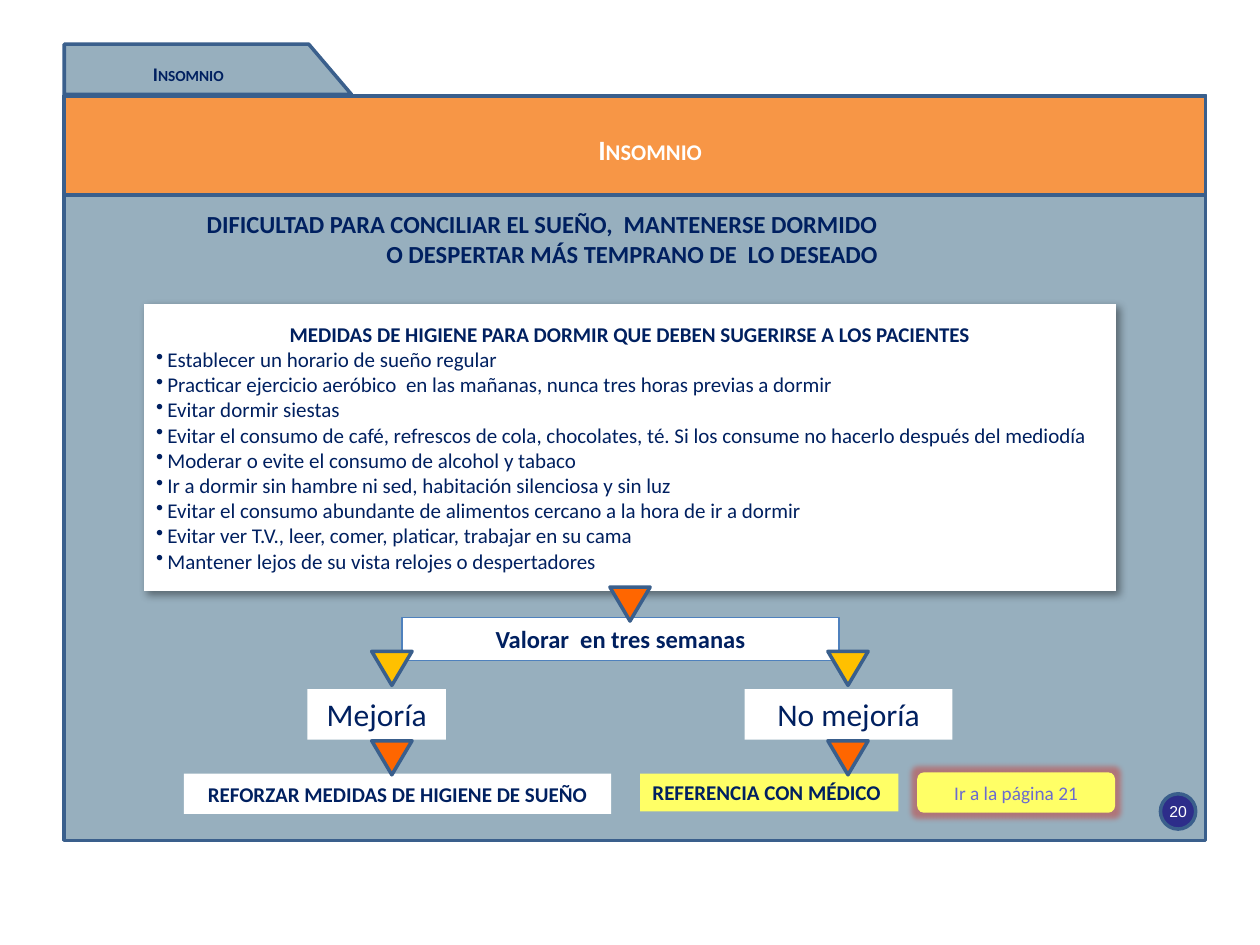
from lxml import etree
from pptx import Presentation
from pptx.dml.color import RGBColor
from pptx.enum.shapes import MSO_SHAPE
from pptx.enum.text import MSO_ANCHOR, PP_ALIGN
from pptx.oxml.ns import qn
from pptx.util import Inches, Pt

RECT, ROUNDED, OVAL = MSO_SHAPE.RECTANGLE, MSO_SHAPE.ROUNDED_RECTANGLE, MSO_SHAPE.OVAL
PROCESS, TRIANGLE = MSO_SHAPE.FLOWCHART_PROCESS, MSO_SHAPE.ISOSCELES_TRIANGLE
LEFT, CENTER, RIGHT = PP_ALIGN.LEFT, PP_ALIGN.CENTER, PP_ALIGN.RIGHT
MIDDLE = MSO_ANCHOR.MIDDLE

STEEL, OUTLINE, NAVY, WHITE = "97AFBE", "3A5F8C", "002060", "FFFFFF"
ORANGE, RED_ORANGE, AMBER, YELLOW = "F79646", "FF6600", "FFC000", "FFFF66"

DEFINITION = ["DIFICULTAD PARA CONCILIAR EL SUEÑO,  MANTENERSE DORMIDO",
              "O DESPERTAR MÁS TEMPRANO DE  LO DESEADO"]
ADVICE_TITLE = "MEDIDAS DE HIGIENE PARA DORMIR QUE DEBEN SUGERIRSE A LOS PACIENTES"
ADVICE = [
    "Establecer un horario de sueño regular",
    "Practicar ejercicio aeróbico  en las mañanas, nunca tres horas previas a dormir",
    "Evitar dormir siestas",
    "Evitar el consumo de café, refrescos de cola, chocolates, té. "
    "Si los consume no hacerlo después del mediodía",
    "Moderar o evite el consumo de alcohol y tabaco",
    "Ir a dormir sin hambre ni sed, habitación silenciosa y sin luz",
    "Evitar el consumo abundante de alimentos cercano a la hora de ir a dormir",
    "Evitar ver T.V., leer, comer, platicar, trabajar en su cama",
    "Mantener lejos de su vista relojes o despertadores",
]


def rgb(hex_color):
    return RGBColor.from_string(hex_color)


def paint(sp, fill=None, line=None, width=2):
    sp.shadow.inherit = False
    if fill:
        sp.fill.solid()
        sp.fill.fore_color.rgb = rgb(fill)
    else:
        sp.fill.background()
    if line:
        sp.line.color.rgb = rgb(line)
        sp.line.width = Pt(width)
    else:
        sp.line.fill.background()
    return sp


def add_box(s, x, y, w, h, fill=None, line=None, width=2, kind=RECT):
    sp = s.shapes.add_shape(kind, Inches(x), Inches(y), Inches(w), Inches(h))
    return paint(sp, fill, line, width)


def write(sp, lines, size, color=NAVY, bold=True, align=CENTER, font="Calibri", small_caps=False):
    tf = sp.text_frame
    tf.word_wrap = True
    tf.vertical_anchor = MIDDLE
    tf.text = "\n".join(lines)
    for p in tf.paragraphs:
        p.alignment = align
        p.font.name, p.font.size, p.font.bold = font, Pt(size), bold
        p.font.color.rgb = rgb(color)
        if small_caps:
            p.font._rPr.set("cap", "small")
    return tf


def add_effect(sp, tag, color, alpha, **attributes):
    """Add a glow or outer shadow; alpha is a percentage."""
    effects = sp._element.spPr.find(qn("a:effectLst"))
    effect = etree.SubElement(effects, qn(tag), {k: str(v) for k, v in attributes.items()})
    clr = etree.SubElement(effect, qn("a:srgbClr"), val=color)
    etree.SubElement(clr, qn("a:alpha"), val=str(alpha * 1000))


def add_bullet(p, indent):
    pPr = p._p.get_or_add_pPr()
    pPr.set("marL", str(Inches(indent)))
    pPr.set("indent", str(-Inches(indent)))
    bullet = etree.Element(qn("a:buChar"), char="•")
    pPr.insert_element_before(bullet, "a:tabLst", "a:defRPr", "a:extLst")


def add_down_arrow(s, center, y, fill):
    w, h = 0.32, 0.27
    sp = add_box(s, center - w / 2, y, w, h, fill, OUTLINE, kind=TRIANGLE)
    sp._element.spPr.xfrm.set("flipV", "1")


def add_tab(s, x, y, w, h):
    slant = 0.34
    corners = [(x + w, y + h), (x + w - slant, y), (x, y)]
    builder = s.shapes.build_freeform(Inches(x), Inches(y + h), scale=1.0)
    builder.add_line_segments([(Inches(a), Inches(b)) for a, b in corners], close=True)
    paint(builder.convert_to_shape(), STEEL, OUTLINE)
    label = add_box(s, x + 0.16, y + 0.09, 1.65, 0.29)
    write(label, ["Insomnio"], 11, small_caps=True)


def add_header(s, x, y, w, h):
    add_box(s, x, y, w, h, ORANGE, OUTLINE)
    title = s.shapes.title
    title.left, title.top = Inches(x + 0.71), Inches(y + 0.15)
    title.width, title.height = Inches(7.88), Inches(0.55)
    tf = write(title, ["Insomnio"], 16, WHITE, small_caps=True)
    tf.paragraphs[0].space_before = Pt(8)
    s.shapes._spTree.append(title._element)  # in front of the band


def add_definition(s, x, y, w, h):
    tf = write(add_box(s, x, y, w, h, kind=PROCESS), DEFINITION, 14, align=RIGHT)
    tf.margin_right = Inches(1.49)


def add_advice(s, x, y, w, h):
    panel = add_box(s, x, y, w, h, WHITE, kind=PROCESS)
    add_effect(panel, "a:outerShdw", "000000", 40, blurRad=Pt(5), dist=Pt(3),
               dir=45 * 60000, algn="tl", rotWithShape=0)
    heading, *items = write(panel, [ADVICE_TITLE] + ADVICE, 12).paragraphs
    for p in items:
        p.alignment, p.font.bold = LEFT, False
        add_bullet(p, 0.09)


def add_decision(s, x, y, w, h):
    """Follow-up box with one branch for each outcome below it."""
    better, worse, answer_y, action_y = x + 1.65, x + 5.27, y + 0.57, y + 1.24
    review = add_box(s, x + 1.73, y, 3.47, 0.34, WHITE, "4F81BD", 0.75)
    write(review, ["Valorar  en tres semanas"], 14)
    for left, width, text in [(0.98, 1.1, "Mejoría"), (4.45, 1.65, "No mejoría")]:
        answer = add_box(s, x + left, answer_y, width, 0.4, WHITE)
        write(answer, [text], 18, bold=False)

    reinforce = add_box(s, x, action_y, 3.39, 0.32, WHITE)
    write(reinforce, ["REFORZAR MEDIDAS DE HIGIENE DE SUEÑO"], 12)
    refer = add_box(s, x + 3.62, action_y, 2.05, 0.3, YELLOW)
    write(refer, ["REFERENCIA CON MÉDICO"], 12, align=LEFT)
    go_to = add_box(s, x + w - 1.57, y + h - 0.32, 1.57, 0.32, YELLOW, kind=ROUNDED)
    add_effect(go_to, "a:glow", "C0504D", 60, rad=Pt(6))
    write(go_to, ["Ir a la página 21"], 11, "6B6BCF", bold=False)

    add_down_arrow(s, x + 3.54, y - 0.24, RED_ORANGE)
    for center in (better, worse):
        add_down_arrow(s, center, y + 0.27, AMBER)
        add_down_arrow(s, center, y + 0.98, RED_ORANGE)


def add_page_number(s, x, y, size):
    sp = add_box(s, x, y, size, size, "2D2D8A", OUTLINE, kind=OVAL)
    tf = write(sp, ["20"], 9, WHITE, bold=False, font="Arial")
    tf.margin_left = tf.margin_right = tf.margin_top = tf.margin_bottom = 0
    tf.word_wrap = False


def main():
    prs = Presentation()
    prs.slide_width, prs.slide_height = Inches(10), Inches(7.5)
    s = prs.slides.add_slide(prs.slide_layouts[5])
    x, y, w = 0.51, 0.76, 9.06
    add_box(s, x, y, w, 5.91, STEEL, OUTLINE)
    add_header(s, x, y, w, 0.79)
    add_tab(s, x, 0.35, 2.28, 0.4)
    add_definition(s, 1.53, 1.7, 6.93, 0.39)
    add_advice(s, 1.14, 2.41, 7.72, 2.28)
    add_decision(s, 1.46, 4.9, 7.39, 1.55)
    add_page_number(s, 9.21, 6.3, 0.28)
    prs.save("out.pptx")


if __name__ == "__main__":
    main()
